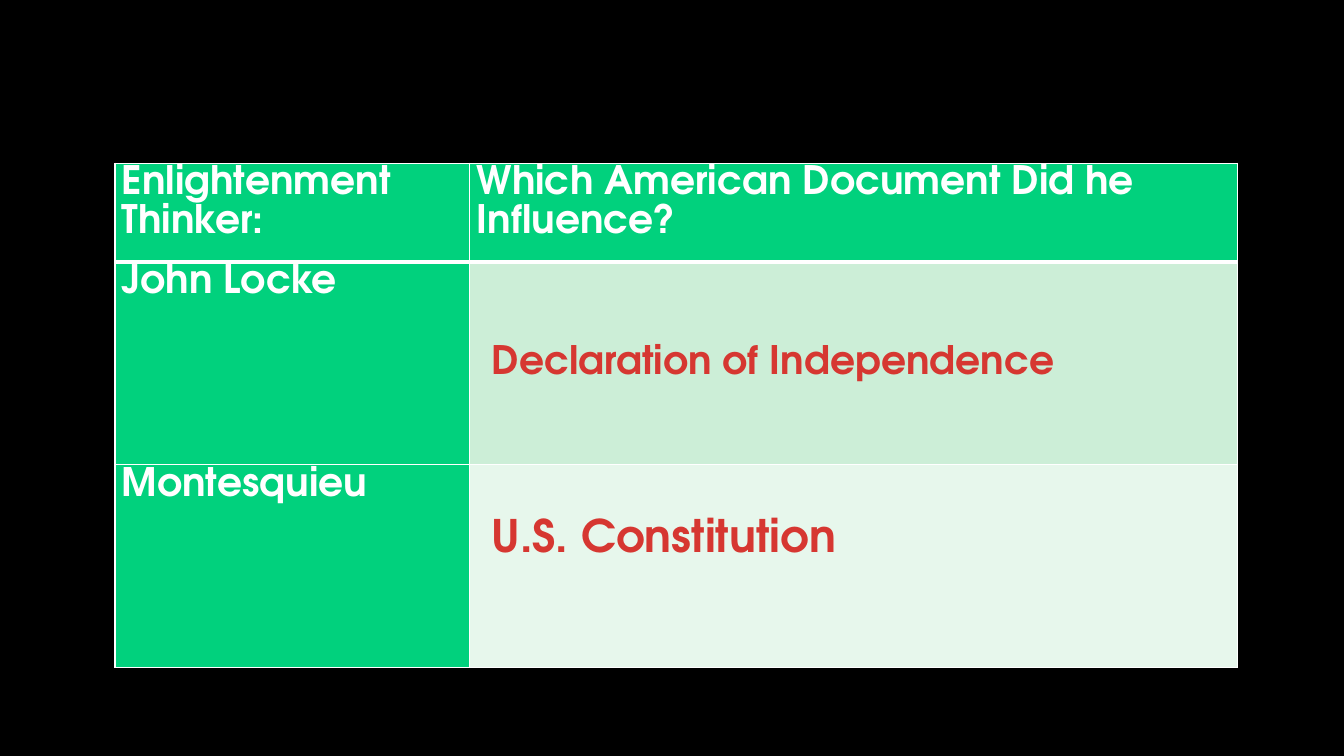
import pptx
import pptx.util
import pptx.dml.color
import pptx.enum.text
import pptx.oxml
import pptx.oxml.ns

Inches = pptx.util.Inches
Pt = pptx.util.Pt
RGBColor = pptx.dml.color.RGBColor

BLACK = RGBColor(0x00, 0x00, 0x00)
WHITE = RGBColor(0xFF, 0xFF, 0xFF)
GREEN = RGBColor(0x01, 0xD1, 0x7D)
MINT = RGBColor(0xCC, 0xEE, 0xD7)
PALE_MINT = RGBColor(0xE7, 0xF7, 0xEC)
RED = RGBColor(0xD6, 0x37, 0x31)
FONT = "TeX Gyre Adventor"

ROWS = [
    [("Enlightenment Thinker:", GREEN), ("Which American Document Did he Influence?", GREEN)],
    [("John Locke", GREEN), ("", MINT)],
    [("Montesquieu", GREEN), ("", PALE_MINT)],
]
COLUMN_WIDTHS = [3.52, 7.61]
ROW_HEIGHTS = [0.98, 2.01, 2.01]
TABLE_LEFT, TABLE_TOP = 1.14, 1.62
ANSWERS = [
    ("Declaration of Independence", 3.28, 0.57, 28),
    ("U.S. Constitution", 4.99, 0.64, 32),
]
ANSWER_LEFT, ANSWER_WIDTH = 4.78, 5.97
CELL_MARGINS = {
    "margin_left": Inches(0.07),
    "margin_top": 0,
    "margin_right": Inches(0.07),
    "margin_bottom": 0,
}


def write(para, text, size, color):
    span = para.add_run()
    span.text = text
    formats = {"name": FONT, "size": Pt(size), "bold": True}
    for name, value in formats.items():
        setattr(span.font, name, value)
    span.font.color.rgb = color


def add_borders(cell, widths):
    properties = cell._tc.get_or_add_tcPr()
    for index, (side, width) in enumerate(widths.items()):
        line = pptx.oxml.parse_xml(
            f'<a:ln{side} {pptx.oxml.ns.nsdecls("a")} w="{Pt(width)}">'
            f'<a:solidFill><a:srgbClr val="{WHITE}"/></a:solidFill></a:ln{side}>'
        )
        properties.insert(index, line)


def add_thinkers_table(page):
    table = page.shapes.add_table(
        len(ROWS), len(COLUMN_WIDTHS), Inches(TABLE_LEFT), Inches(TABLE_TOP),
        Inches(sum(COLUMN_WIDTHS)), Inches(sum(ROW_HEIGHTS)),
    ).table
    for column, width in zip(table.columns, COLUMN_WIDTHS):
        column.width = Inches(width)
    for row, height in zip(table.rows, ROW_HEIGHTS):
        row.height = Inches(height)
    for row_index, row in enumerate(ROWS):
        for column_index, (text, fill) in enumerate(row):
            cell = table.cell(row_index, column_index)
            cell.fill.solid()
            cell.fill.fore_color.rgb = fill
            top = 3 if row_index == 1 else 1
            bottom = 3 if row_index == 0 else 1
            add_borders(cell, {"L": 1, "R": 1, "T": top, "B": bottom})
            for name, value in CELL_MARGINS.items():
                setattr(cell, name, value)
            if text:
                para = cell.text_frame.paragraphs[0]
                para.line_spacing = 1.07
                write(para, text, 28, WHITE)


def add_answer(page, text, top, height, size):
    box = page.shapes.add_textbox(
        Inches(ANSWER_LEFT), Inches(top), Inches(ANSWER_WIDTH), Inches(height)
    )
    box.text_frame.word_wrap = True
    box.text_frame.auto_size = pptx.enum.text.MSO_AUTO_SIZE.SHAPE_TO_FIT_TEXT
    write(box.text_frame.paragraphs[0], text, size, RED)


def main():
    deck = pptx.Presentation()
    deck.slide_width = Inches(13.33)
    deck.slide_height = Inches(7.5)
    page = deck.slides.add_slide(deck.slide_layouts[6])
    page.background.fill.solid()
    page.background.fill.fore_color.rgb = BLACK
    add_thinkers_table(page)
    for answer in ANSWERS:
        add_answer(page, *answer)
    deck.save("out.pptx")


if __name__ == "__main__":
    main()
